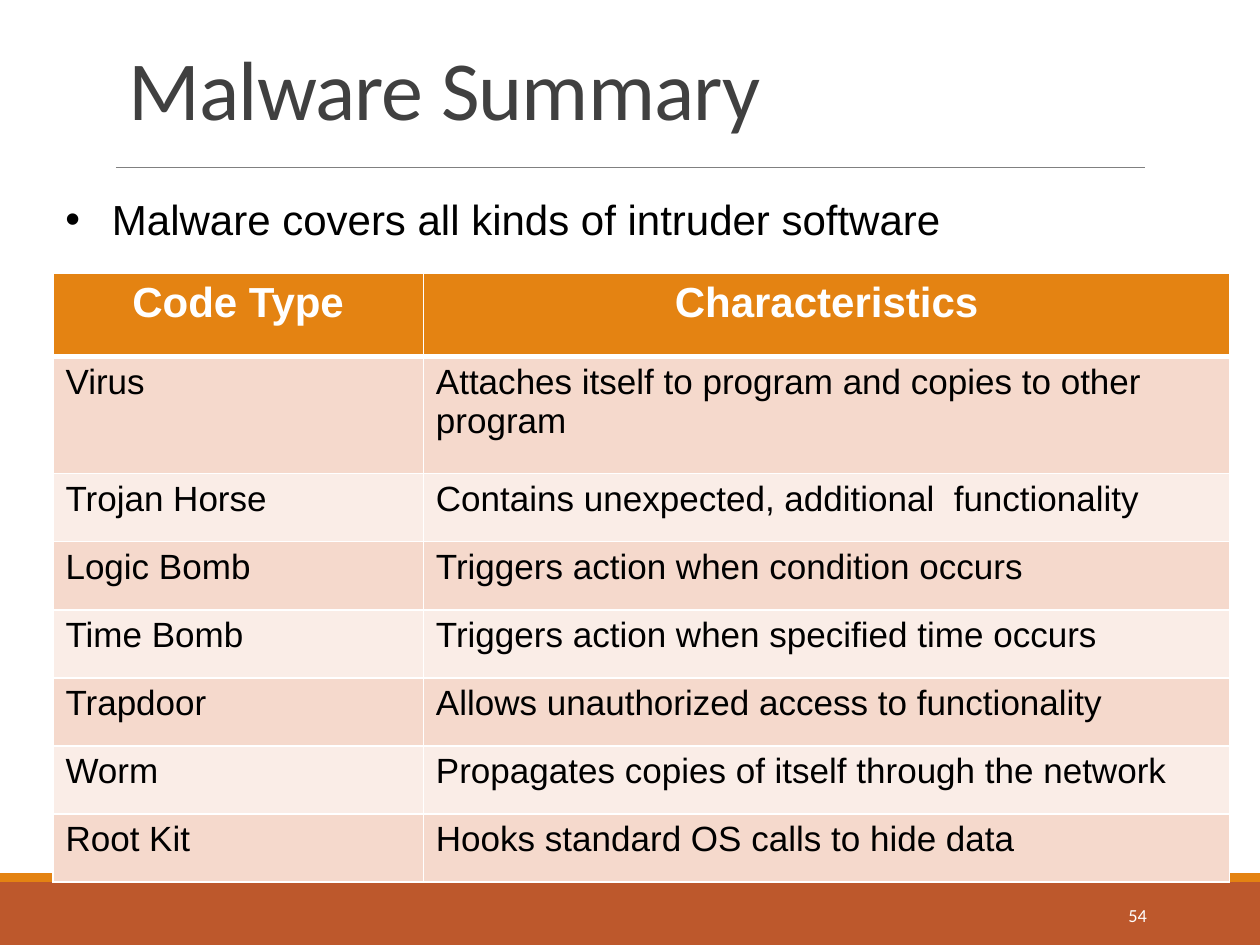
from dataclasses import dataclass

from lxml.etree import SubElement
from pptx import Presentation
from pptx.dml.color import RGBColor
from pptx.enum.shapes import MSO_CONNECTOR, MSO_SHAPE
from pptx.enum.text import MSO_ANCHOR, PP_ALIGN
from pptx.oxml import parse_xml
from pptx.oxml.ns import nsdecls, qn
from pptx.util import Inches, Pt

WHITE = RGBColor(0xFF, 0xFF, 0xFF)
BLACK = RGBColor(0x00, 0x00, 0x00)
TITLE_GRAY = RGBColor(0x40, 0x40, 0x40)
RULE_GRAY = RGBColor(0x80, 0x80, 0x80)
ORANGE = RGBColor(0xE4, 0x83, 0x12)
RUST = RGBColor(0xBD, 0x58, 0x2C)
BAND_DARK = RGBColor(0xF5, 0xD9, 0xCC)
BAND_LIGHT = RGBColor(0xFA, 0xED, 0xE7)

COLUMN_WIDTHS = (2.94, 6.4)
HEADER_HEIGHT = 0.66
TALL_HEIGHT = 0.93
ROW_HEIGHT = 0.54


@dataclass(frozen=True)
class Band:
    top: float
    height: float
    color: RGBColor


@dataclass(frozen=True)
class TextStyle:
    font: str
    size: float
    color: RGBColor
    bold: bool = False


@dataclass(frozen=True)
class Malware:
    code_type: str
    characteristics: str
    height: float = ROW_HEIGHT


TITLE_STYLE = TextStyle("Calibri", 48, TITLE_GRAY)
BULLET_STYLE = TextStyle("Arial", 24, BLACK)
HEADER_STYLE = TextStyle("Arial", 24, WHITE, True)
BODY_STYLE = TextStyle("Arial", 20, BLACK)
NUMBER_STYLE = TextStyle("Calibri", 10.5, WHITE)

BANDS = (Band(7, 0.5, RUST), Band(6.93, 0.07, ORANGE))

ROWS = (
    Malware("Code Type", "Characteristics", HEADER_HEIGHT),
    Malware("Virus", "Attaches itself to program and copies to other program", TALL_HEIGHT),
    Malware("Trojan Horse", "Contains unexpected, additional  functionality"),
    Malware("Logic Bomb", "Triggers action when condition occurs"),
    Malware("Time Bomb", "Triggers action when specified time occurs"),
    Malware("Trapdoor", "Allows unauthorized access to functionality"),
    Malware("Worm", "Propagates copies of itself through the network"),
    Malware("Root Kit", "Hooks standard OS calls to hide data"),
)


def add_span(para, text: str, style: TextStyle):
    span = para.add_run()
    span.text = text
    span.font.name = style.font
    span.font.size = Pt(style.size)
    span.font.bold = style.bold
    span.font.color.rgb = style.color
    return span


def add_band(page, band: Band) -> None:
    shape = page.shapes.add_shape(
        MSO_SHAPE.RECTANGLE, 0, Inches(band.top), Inches(10), Inches(band.height)
    )
    shape.shadow.inherit = False
    shape.fill.solid()
    shape.fill.fore_color.rgb = band.color
    shape.line.fill.background()


def add_rule(page) -> None:
    rule = page.shapes.add_connector(
        MSO_CONNECTOR.STRAIGHT, Inches(0.92), Inches(1.33), Inches(9.09), Inches(1.33)
    )
    rule.line.color.rgb = RULE_GRAY
    rule.line.width = Pt(0.5)
    SubElement(rule._element.spPr, qn("a:effectLst"))


def format_title(page) -> None:
    title = page.shapes.title
    title.left, title.top = Inches(0.92), Inches(0.25)
    title.width, title.height = Inches(8.25), Inches(0.89)
    title.text_frame.vertical_anchor = MSO_ANCHOR.BOTTOM
    para = title.text_frame.paragraphs[0]
    para.alignment = PP_ALIGN.LEFT
    para.line_spacing = 0.85
    span = add_span(para, "Malware Summary", TITLE_STYLE)
    span.font._element.set("spc", "-50")


def add_border(cell, position: int, side: str, width: float) -> None:
    border = parse_xml(
        f'<a:{side} {nsdecls("a")} w="{Pt(width)}"><a:solidFill>'
        f'<a:srgbClr val="{WHITE}"/></a:solidFill></a:{side}>'
    )
    cell._tc.get_or_add_tcPr().insert(position, border)


def fill_cell(cell, text: str, row_index: int) -> None:
    is_header = row_index == 0
    cell.fill.solid()
    if is_header:
        cell.fill.fore_color.rgb = ORANGE
    else:
        cell.fill.fore_color.rgb = BAND_DARK if row_index % 2 else BAND_LIGHT
    widths = {"lnL": 1, "lnR": 1, "lnT": 3 if row_index == 1 else 1, "lnB": 3 if is_header else 1}
    for position, (side, width) in enumerate(widths.items()):
        add_border(cell, position, side, width)
    para = cell.text_frame.paragraphs[0]
    para.alignment = PP_ALIGN.CENTER if is_header else PP_ALIGN.LEFT
    add_span(para, text, HEADER_STYLE if is_header else BODY_STYLE)


def add_malware_table(page) -> None:
    frame = page.shapes.add_table(
        len(ROWS), len(COLUMN_WIDTHS), Inches(0.42), Inches(2.17),
        Inches(sum(COLUMN_WIDTHS)), Inches(sum(row.height for row in ROWS)),
    )
    table = frame.table
    for column, width in zip(table.columns, COLUMN_WIDTHS):
        column.width = Inches(width)
    for row_index, row in enumerate(ROWS):
        table.rows[row_index].height = Inches(row.height)
        for column_index, text in enumerate((row.code_type, row.characteristics)):
            fill_cell(table.cell(row_index, column_index), text, row_index)


def add_text_box(page, left: float, top: float, width: float, height: float):
    box = page.shapes.add_textbox(Inches(left), Inches(top), Inches(width), Inches(height))
    box.text_frame.word_wrap = True
    return box.text_frame


def add_bullet(page) -> None:
    para = add_text_box(page, 0.42, 1.53, 9.33, 0.47).paragraphs[0]
    para.line_spacing = 0.9
    para.space_before = Pt(7)
    properties = para._p.get_or_add_pPr()
    properties.set("marL", str(Inches(0.37)))
    properties.set("indent", str(Inches(-0.37)))
    SubElement(properties, qn("a:buFont")).set("typeface", "Arial")
    SubElement(properties, qn("a:buChar")).set("char", "•")
    add_span(para, "Malware covers all kinds of intruder software", BULLET_STYLE)


def add_page_number(page) -> None:
    text_frame = add_text_box(page, 8.12, 7.06, 1.08, 0.4)
    text_frame.vertical_anchor = MSO_ANCHOR.MIDDLE
    para = text_frame.paragraphs[0]
    para.alignment = PP_ALIGN.RIGHT
    add_span(para, "54", NUMBER_STYLE)


def main() -> None:
    deck = Presentation()
    deck.slide_width, deck.slide_height = Inches(10), Inches(7.5)
    page = deck.slides.add_slide(deck.slide_layouts[5])
    for band in BANDS:
        add_band(page, band)
    add_rule(page)
    format_title(page)
    add_malware_table(page)
    add_bullet(page)
    add_page_number(page)
    deck.save("out.pptx")


if __name__ == "__main__":
    main()
